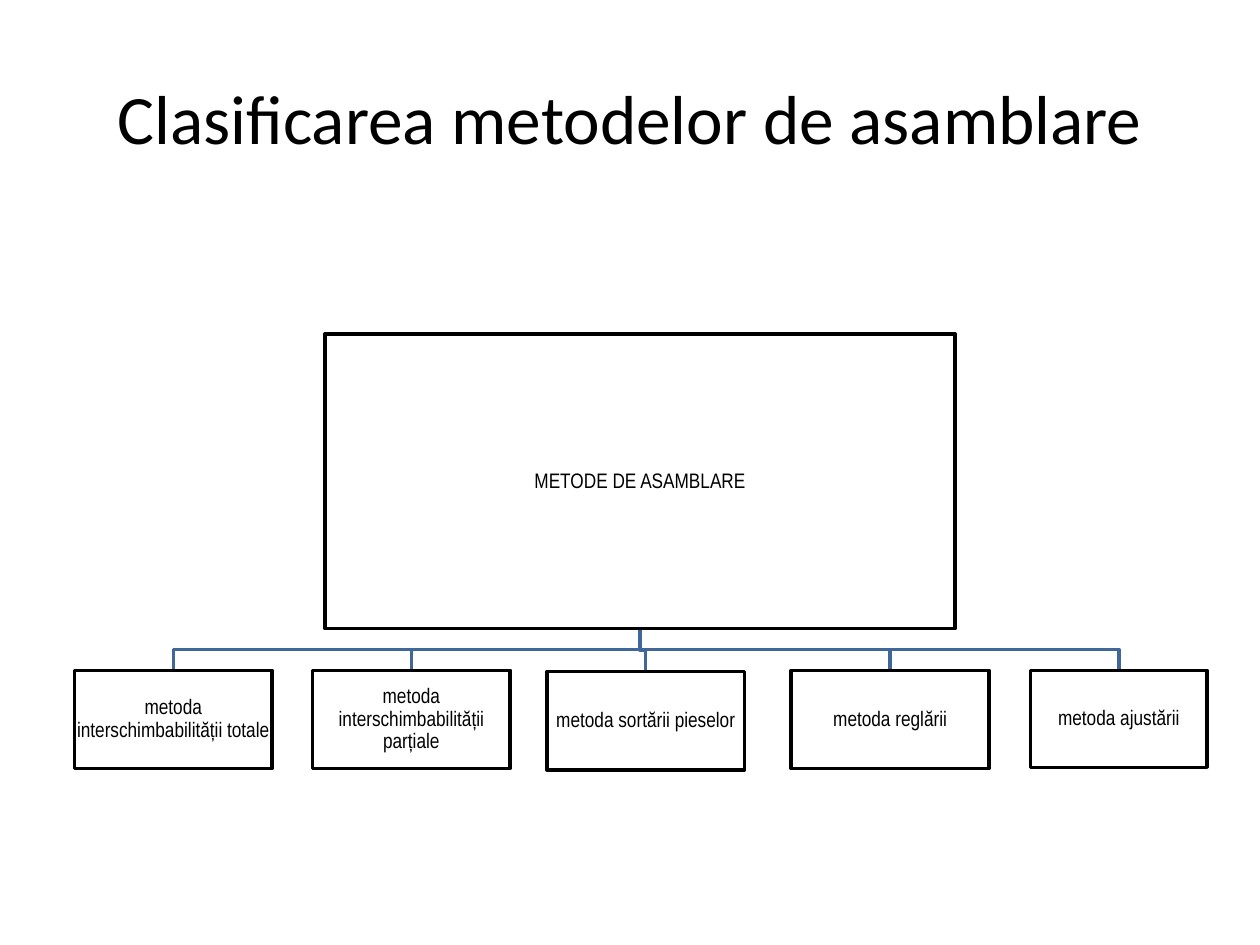
import pptx
import pptx.dml.color
import pptx.enum.shapes
import pptx.enum.text
import pptx.util

THEME = {
    "ink": pptx.dml.color.RGBColor.from_string("000000"),
    "paper": pptx.dml.color.RGBColor.from_string("FFFFFF"),
    "branch": pptx.dml.color.RGBColor.from_string("3F6797"),
    "title_font": "Calibri",
    "box_font": "Arial Narrow",
    "title_size": pptx.util.Pt(39.6),
    "box_size": pptx.util.Pt(12),
    "stroke": pptx.util.Pt(2),
    "inset": pptx.util.Inches(0.01),
}

deck = pptx.Presentation()
deck.slide_width = pptx.util.Inches(10)
deck.slide_height = pptx.util.Inches(7.5)
column = deck.slide_width / 100
row = deck.slide_height / 75
slide = deck.slides.add_slide(deck.slide_layouts[5])


def format_text(frame, text, font_name, size):
    frame.text = text
    frame.word_wrap = True
    frame.auto_size = pptx.enum.text.MSO_AUTO_SIZE.NONE
    frame.vertical_anchor = pptx.enum.text.MSO_ANCHOR.MIDDLE
    para = frame.paragraphs[0]
    para.alignment = pptx.enum.text.PP_ALIGN.CENTER
    para.font.name = font_name
    para.font.size = size
    para.font.color.rgb = THEME["ink"]
    return para


def add_box(text, left, top, width, height):
    box = slide.shapes.add_shape(
        pptx.enum.shapes.MSO_SHAPE.RECTANGLE,
        round(left * column), round(top * row),
        round(width * column), round(height * row),
    )
    box.shadow.inherit = False
    box.fill.solid()
    box.fill.fore_color.rgb = THEME["paper"]
    box.line.color.rgb = THEME["ink"]
    box.line.width = THEME["stroke"]
    frame = box.text_frame
    frame.margin_left = frame.margin_right = THEME["inset"]
    frame.margin_top = frame.margin_bottom = THEME["inset"]
    para = format_text(frame, text, THEME["box_font"], THEME["box_size"])
    para.line_spacing = 0.9


title = slide.shapes.title
title.left, title.top = round(5 * column), round(3 * row)
title.width, title.height = round(90 * column), round(12.5 * row)
format_text(title.text_frame, "Clasificarea metodelor de asamblare",
            THEME["title_font"], THEME["title_size"])

root_left, root_top, root_width, root_height = 25.8, 26.5, 50, 23.4
root_center = root_left + root_width / 2
root_bottom = root_top + root_height

methods = [
    ("metoda interschimbabilității totale", 5.9, 53.2, 15.7, 7.8),
    ("metoda interschimbabilității parțiale", 24.8, 53.2, 15.7, 7.8),
    ("metoda sortării pieselor", 43.4, 53.3, 15.7, 7.8),
    ("metoda reglării", 62.8, 53.2, 15.7, 7.8),
    ("metoda ajustării", 81.8, 53.2, 14, 7.7),
]

for text, left, top, width, height in methods:
    center = left + width / 2
    middle = (root_bottom + top) / 2
    builder = slide.shapes.build_freeform(
        round(root_center * column), round(root_bottom * row))
    builder.add_line_segments(
        [(round(x * column), round(y * row))
         for x, y in [(root_center, middle), (center, middle), (center, top)]],
        close=False,
    )
    branch = builder.convert_to_shape()
    branch.shadow.inherit = False
    branch.fill.background()
    branch.line.color.rgb = THEME["branch"]
    branch.line.width = THEME["stroke"]

add_box("METODE DE ASAMBLARE", root_left, root_top, root_width, root_height)
for method in methods:
    add_box(*method)

deck.save("out.pptx")
